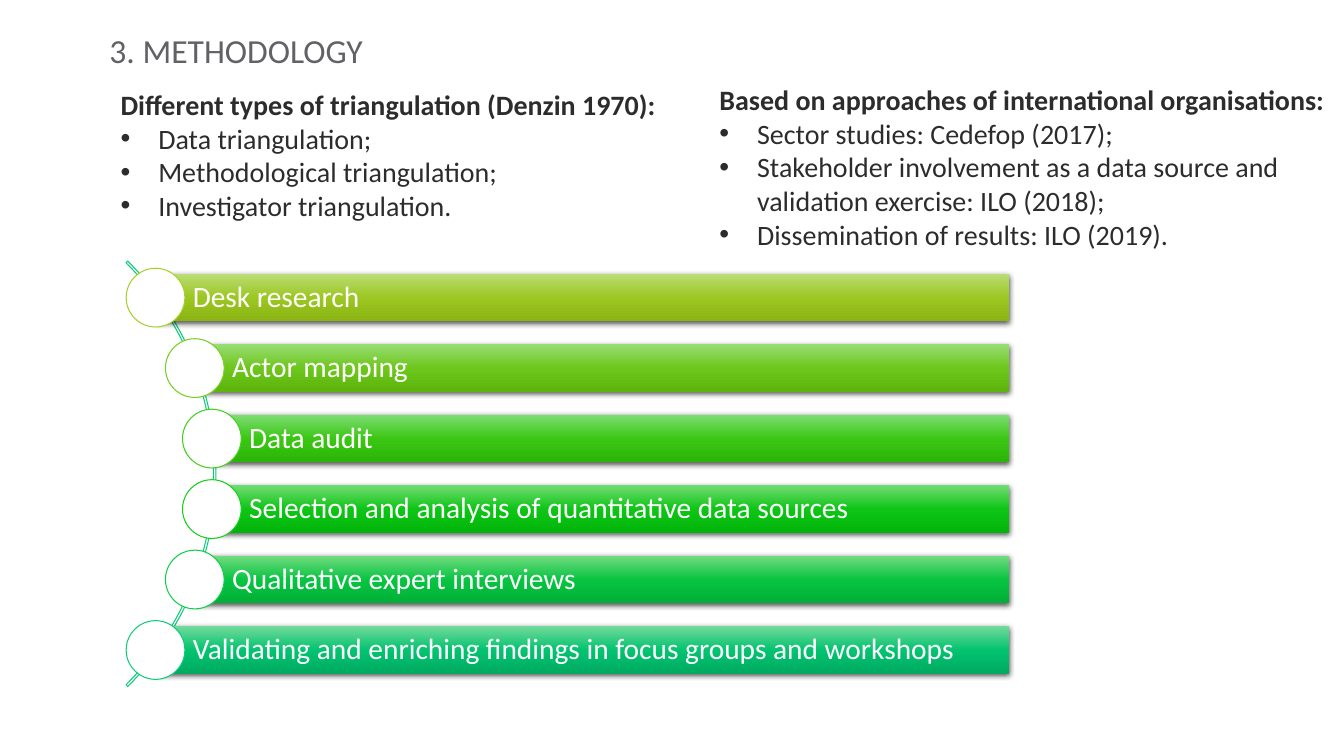
from copy import deepcopy
from dataclasses import dataclass

from lxml.etree import SubElement
from pptx import Presentation
from pptx.dml.color import RGBColor
from pptx.enum.shapes import MSO_SHAPE
from pptx.enum.text import MSO_ANCHOR, MSO_AUTO_SIZE, PP_ALIGN
from pptx.oxml.ns import qn
from pptx.util import Cm, Pt


@dataclass(frozen=True)
class Theme:
    font: str = "Calibri"
    title_size: int = 24
    body_size: int = 20
    bar_size: int = 21
    title: str = "616166"
    body: str = "2C2C2C"
    white: str = "FFFFFF"
    arc: str = "08CC78"
    shadow: str = "000000"


@dataclass(frozen=True)
class Box:
    left: float
    top: float
    width: float
    height: float

    def lengths(self):
        return [Cm(value) for value in (self.left, self.top, self.width, self.height)]


@dataclass(frozen=True)
class Step:
    label: str
    indent: float
    gradient: tuple
    outline: str


THEME = Theme()

TRIANGULATION = (
    "Different types of triangulation (Denzin 1970):",
    ["Data triangulation;", "Methodological triangulation;", "Investigator triangulation."],
)
APPROACHES = (
    "Based on approaches of international organisations:",
    [
        "Sector studies: Cedefop (2017);",
        "Stakeholder involvement as a data source and validation exercise: ILO (2018);",
        "Dissemination of results: ILO (2019).",
    ],
)
STEPS = [
    Step("Desk research", 0, ("BADD75", "9CC621", "8BB413"), "A5D028"),
    Step("Actor mapping", 0.99, ("98DD74", "6DC61B", "5DB50C"), "75D021"),
    Step("Data audit", 1.42, ("7DDD73", "3BC614", "2CB506"), "42CF1A"),
    Step("Selection and analysis of quantitative data sources", 1.42,
         ("72DC73", "0EC516", "01B409"), "14CF1C"),
    Step("Qualitative expert interviews", 0.99, ("72DB80", "08C442", "00B036"), "0ECE49"),
    Step("Validating and enriching findings in focus groups and workshops", 0,
         ("72DA9A", "03C370", "00AA61"), "08CC78"),
]


def add_span(para, text, size, color, bold=False):
    span = para.add_run()
    span.text = text
    span.font.name = THEME.font
    span.font.size = Pt(size)
    span.font.bold = bold
    span.font.color.rgb = RGBColor.from_string(color)


def add_text_frame(page, box):
    frame = page.shapes.add_textbox(*box.lengths()).text_frame
    frame.word_wrap = True
    frame.auto_size = MSO_AUTO_SIZE.SHAPE_TO_FIT_TEXT
    return frame


def add_bullet(para):
    properties = para._p.get_or_add_pPr()
    properties.set("marL", str(Cm(0.95)))
    properties.set("indent", str(-Cm(0.95)))
    SubElement(properties, qn("a:buFont"), typeface="Arial")
    SubElement(properties, qn("a:buChar"), char="•")


def add_title(page, box, text):
    para = add_text_frame(page, box).paragraphs[0]
    add_span(para, text, THEME.title_size, THEME.title)


def add_bullet_list(page, box, heading, items):
    frame = add_text_frame(page, box)
    add_span(frame.paragraphs[0], heading, THEME.body_size, THEME.body, bold=True)
    for item in items:
        para = frame.add_paragraph()
        add_bullet(para)
        add_span(para, item, THEME.body_size, THEME.body)


def add_outlined_shape(page, kind, box, outline):
    shape = page.shapes.add_shape(kind, *box.lengths())
    shape.shadow.inherit = False
    shape.line.color.rgb = RGBColor.from_string(outline)
    shape.line.width = Pt(0.75)
    return shape


def fill_gradient(shape, colors):
    shape.fill.gradient()
    shape.fill.gradient_angle = 270
    stops = shape._element.spPr.find(qn("a:gradFill")).find(qn("a:gsLst"))
    stops.append(deepcopy(stops[0]))
    for stop, color, position in zip(shape.fill.gradient_stops, colors, (0, 0.5, 1)):
        stop.color.rgb = RGBColor.from_string(color)
        stop.position = position


def add_shadow(shape):
    shape.shadow.inherit = False
    effects = shape._element.spPr.find(qn("a:effectLst"))
    shadow = SubElement(effects, qn("a:outerShdw"), blurRad=str(Pt(4)), dist=str(Pt(1.2)),
                        dir="5400000", rotWithShape="0")
    color = SubElement(shadow, qn("a:srgbClr"), val=THEME.shadow)
    SubElement(color, qn("a:alpha"), val="68000")


def add_bar(page, box, step):
    bar = page.shapes.add_shape(MSO_SHAPE.RECTANGLE, *box.lengths())
    fill_gradient(bar, step.gradient)
    bar.line.fill.background()
    add_shadow(bar)
    frame = bar.text_frame
    frame.word_wrap = True
    frame.vertical_anchor = MSO_ANCHOR.MIDDLE
    frame.margin_left = Cm(0.94)
    frame.margin_top = frame.margin_right = frame.margin_bottom = Cm(0.15)
    para = frame.paragraphs[0]
    para.alignment = PP_ALIGN.LEFT
    para.line_spacing = 0.9
    add_span(para, step.label, THEME.bar_size, THEME.white)


def add_process(page, box, steps):
    disc_size, bar_height, arc_size, arc_reach = 1.48, 1.19, 15.16, 2.26
    arc_box = Box(box.left + arc_reach - arc_size,
                  box.top + (box.height - arc_size) / 2, arc_size, arc_size)
    arc = add_outlined_shape(page, MSO_SHAPE.BLOCK_ARC, arc_box, THEME.arc)
    arc.fill.background()
    for index, value in enumerate((189, 27, 0.004)):
        arc.adjustments[index] = value

    pitch = (box.height - disc_size) / (len(steps) - 1)
    for index, step in enumerate(steps):
        left = box.left + step.indent
        top = box.top + index * pitch
        bar_left = left + disc_size / 2
        bar_box = Box(bar_left, top + (disc_size - bar_height) / 2,
                      box.left + box.width - bar_left, bar_height)
        add_bar(page, bar_box, step)
        disc = add_outlined_shape(page, MSO_SHAPE.OVAL,
                                  Box(left, top, disc_size, disc_size), step.outline)
        disc.fill.solid()
        disc.fill.fore_color.rgb = RGBColor.from_string(THEME.white)


def main():
    deck = Presentation()
    deck.slide_width, deck.slide_height = Cm(33.87), Cm(19.05)
    page = deck.slides.add_slide(deck.slide_layouts[6])
    add_bullet_list(page, Box(2.79, 2.08, 14.33, 3.68), *TRIANGULATION)
    add_title(page, Box(2.51, 0.64, 26.09, 1.27), "3. METHODOLOGY")
    add_process(page, Box(3.18, 6.76, 22.25, 10.36), STEPS)
    add_bullet_list(page, Box(17.88, 1.96, 15.98, 4.52), *APPROACHES)
    deck.save("out.pptx")


if __name__ == "__main__":
    main()
